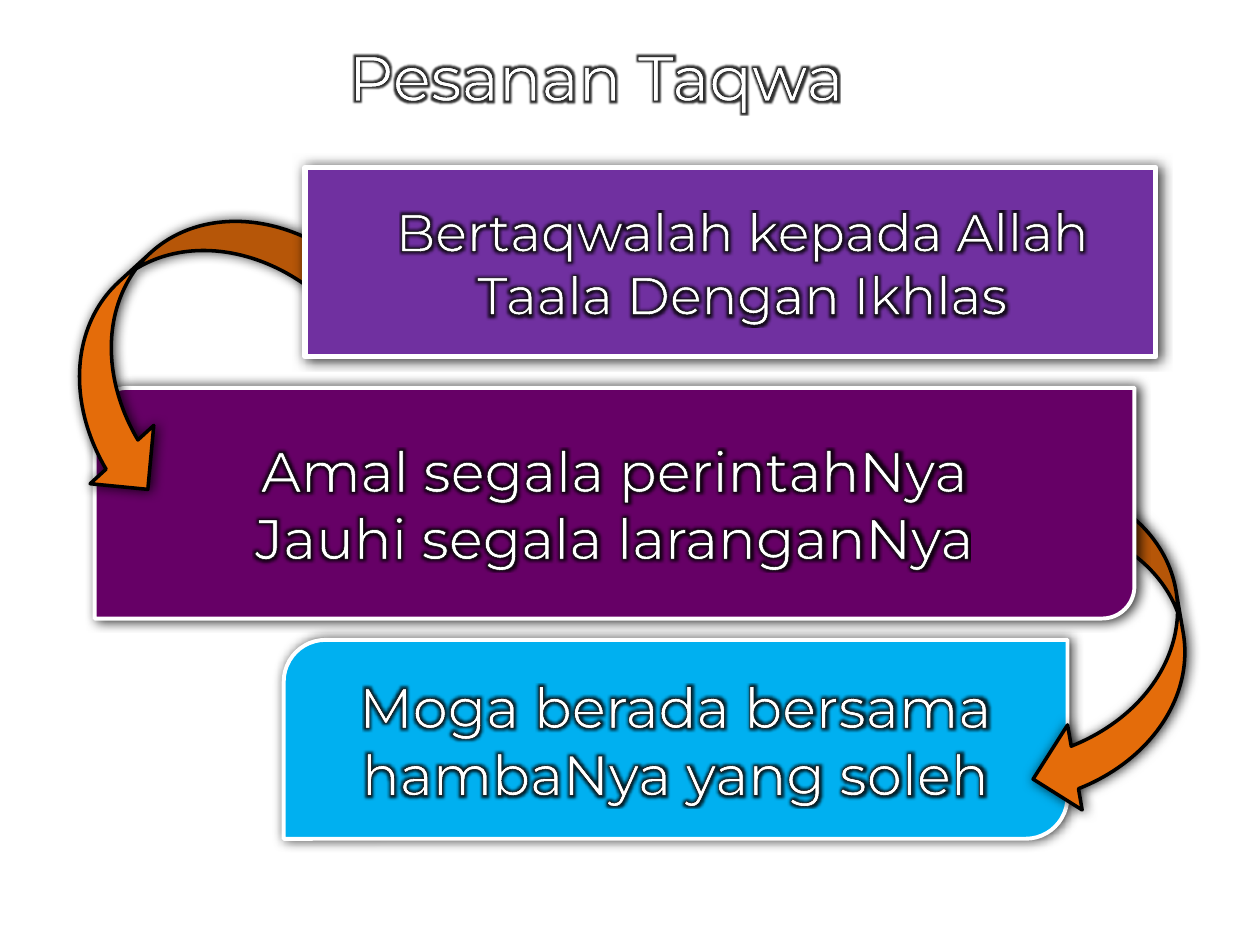
import lxml.etree
import pptx
import pptx.dml.color
import pptx.enum.shapes
import pptx.enum.text
import pptx.oxml.ns
import pptx.util

Cm = pptx.util.Cm
Pt = pptx.util.Pt
SHAPE = pptx.enum.shapes.MSO_SHAPE
ALIGN = pptx.enum.text.PP_ALIGN
ANCHOR = pptx.enum.text.MSO_ANCHOR
AUTO_SIZE = pptx.enum.text.MSO_AUTO_SIZE
qn = pptx.oxml.ns.qn

COLORS = {
    "white": "FFFFFF",
    "black": "000000",
    "sky": "00B0F0",
    "plum": "660066",
    "violet": "7030A0",
    "orange": "E46C0A",
}


def rgb(name):
    return pptx.dml.color.RGBColor.from_string(COLORS[name])


def apply_format(target, values):
    for attribute, value in values.items():
        setattr(target, attribute, value)


def add_element(parent, tag, **attributes):
    return lxml.etree.SubElement(parent, qn(tag), attributes)


def add_black(parent, opacity):
    color = add_element(parent, "a:srgbClr", val=COLORS["black"])
    add_element(color, "a:alpha", val=str(opacity * 1000))


class SlideBuilder:
    font_name = "Montserrat"

    def __init__(self, slide):
        self.slide = slide

    def fill_text(self, frame, lines, size, outline, indent=0):
        apply_format(frame, {"word_wrap": True, "vertical_anchor": ANCHOR.MIDDLE})
        for index, line in enumerate(lines):
            paragraph = frame.paragraphs[0] if index == 0 else frame.add_paragraph()
            paragraph.alignment = ALIGN.CENTER
            if indent:
                properties = paragraph._p.get_or_add_pPr()
                properties.set("marL", str(Cm(indent)))
                properties.set("indent", "0")
            run = paragraph.add_run()
            run.text = line
            apply_format(run.font, {"size": Pt(size), "name": self.font_name})
            run.font.color.rgb = rgb("white")
            self.decorate_letters(run, outline)

    def decorate_letters(self, run, outline):
        properties = run._r.get_or_add_rPr()
        edge = add_element(properties, "a:ln", w=str(Pt(outline)))
        fill = add_element(edge, "a:solidFill")
        add_element(fill, "a:srgbClr", val=COLORS["black"])
        properties.insert(0, edge)
        effects = add_element(properties, "a:effectLst")
        glow = add_element(effects, "a:glow", rad=str(Pt(4)))
        add_black(glow, 80)
        properties.find(qn("a:solidFill")).addnext(effects)

    def title(self, place, text):
        box = self.slide.shapes.add_textbox(*map(Cm, place))
        self.fill_text(box.text_frame, [text], 36, 0.75)
        apply_format(box.text_frame, {"auto_size": AUTO_SIZE.SHAPE_TO_FIT_TEXT,
                                      "vertical_anchor": ANCHOR.TOP})

    def shape(self, kind, place, fill, line, width):
        shape = self.slide.shapes.add_shape(kind, *map(Cm, place))
        shape.shadow.inherit = False
        shape.fill.solid()
        shape.fill.fore_color.rgb = rgb(fill)
        shape.line.color.rgb = rgb(line)
        shape.line.width = Pt(width)
        effects = shape._element.spPr.find(qn("a:effectLst"))
        shadow = add_element(effects, "a:outerShdw", blurRad=str(Pt(7)),
                             dist=str(Pt(1)), dir="0", algn="ctr", rotWithShape="0")
        add_black(shadow, 80)
        return shape

    def panel(self, kind, place, corner, fill, lines, size=32,
              border=2.25, outline=0.5, indent=0):
        panel = self.shape(kind, place, fill, "white", border)
        panel.adjustments[0] = corner
        self.fill_text(panel.text_frame, lines, size, outline, indent)

    def arrow(self, left, top, rotation, mirrored=False):
        arrow = self.shape(SHAPE.CURVED_DOWN_ARROW, (left, top, 6.96, 3.48),
                           "orange", "black", 2)
        arrow.rotation = rotation
        if mirrored:
            arrow._element.spPr.find(qn("a:xfrm")).set("flipH", "1")


def main():
    deck = pptx.Presentation()
    apply_format(deck, {"slide_width": Cm(25.4), "slide_height": Cm(19.05)})
    builder = SlideBuilder(deck.slides.add_slide(deck.slide_layouts[6]))

    builder.title((1.4, 0.64, 21.23, 1.8), "Pesanan Taqwa")
    builder.panel(SHAPE.ROUND_2_DIAG_RECTANGLE, (5.72, 12.9, 15.8, 4.01), 0.21,
                  "sky", ["Moga berada bersama hambaNya yang soleh"])
    builder.arrow(18.62, 11.1, 80.3)
    builder.panel(SHAPE.ROUND_2_DIAG_RECTANGLE, (1.91, 7.82, 20.96, 4.65), 0.14,
                  "plum", ["Amal segala perintahNya", "Jauhi segala laranganNya"])
    builder.arrow(0.25, 5.08, 317.5, mirrored=True)
    builder.panel(SHAPE.ROUNDED_RECTANGLE, (6.15, 3.38, 17.15, 3.81), 0,
                  "violet", ["Bertaqwalah kepada Allah Taala Dengan Ikhlas"],
                  size=30, border=3, outline=0.75, indent=0.48)

    deck.save("out.pptx")


if __name__ == "__main__":
    main()
